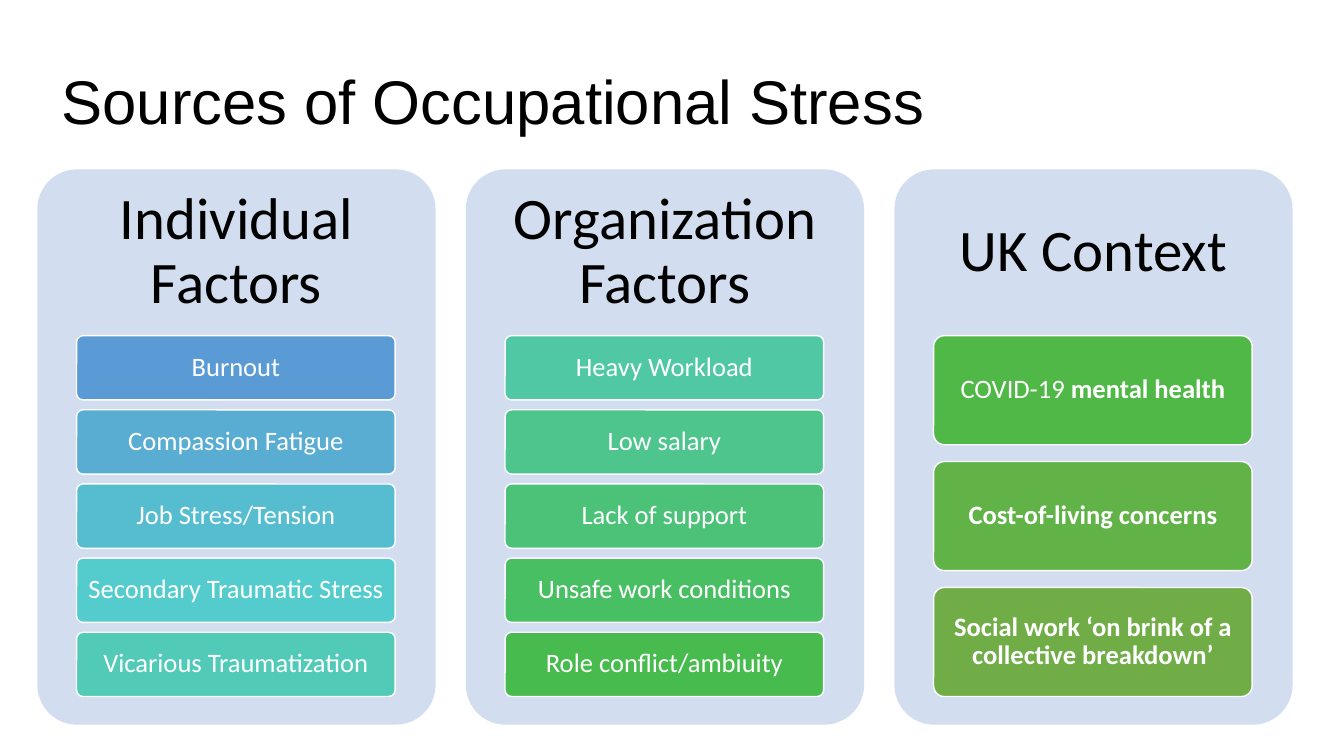
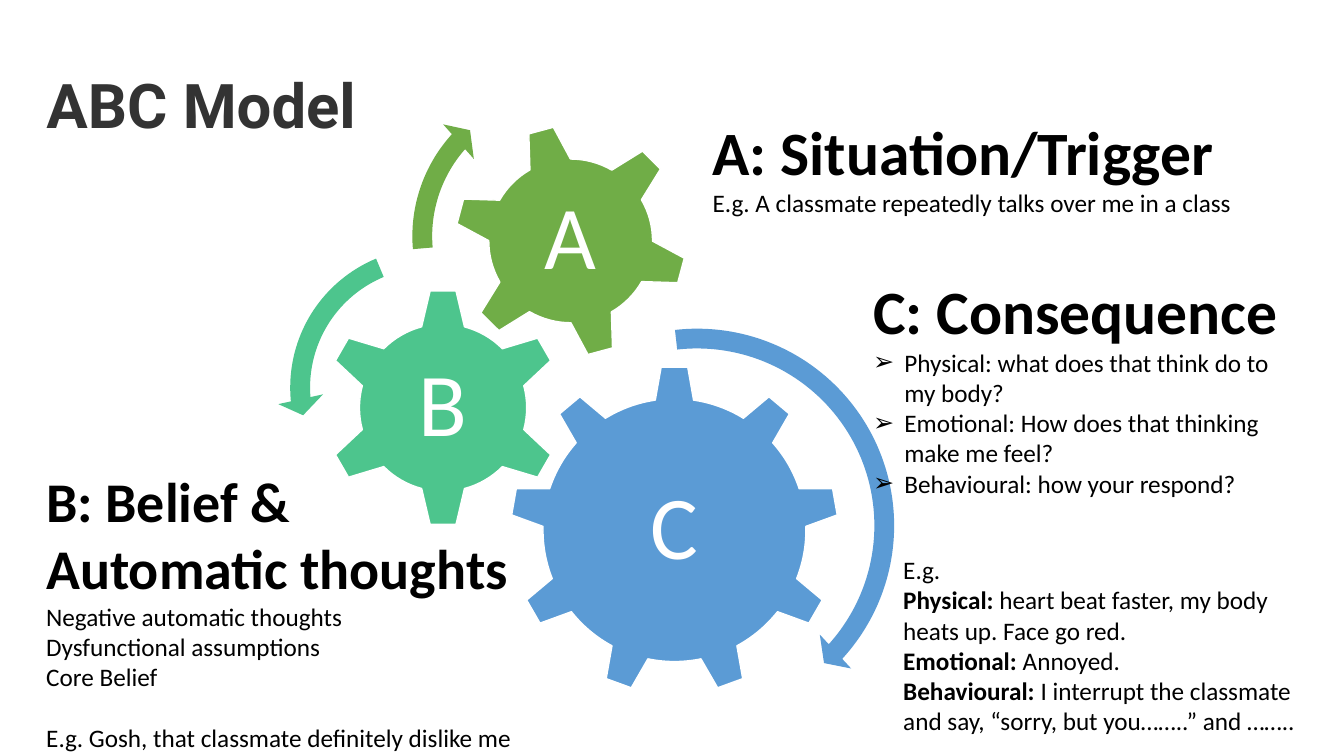
"""Build two slides on occupational stress and the ABC model."""
import pptx
import pptx.util
import pptx.dml.color
import pptx.enum.shapes
import pptx.enum.text
import pptx.oxml.ns
import lxml.etree

Inches = pptx.util.Inches
Pt = pptx.util.Pt
RGBColor = pptx.dml.color.RGBColor
SHAPE = pptx.enum.shapes.MSO_SHAPE
ALIGN = pptx.enum.text.PP_ALIGN
ANCHOR = pptx.enum.text.MSO_ANCHOR
AUTO_SIZE = pptx.enum.text.MSO_AUTO_SIZE
qn = pptx.oxml.ns.qn

BLACK = RGBColor(0x00, 0x00, 0x00)
WHITE = RGBColor(0xFF, 0xFF, 0xFF)
CHARCOAL = RGBColor(0x33, 0x33, 0x33)
PANEL = RGBColor(0xD2, 0xDE, 0xEF)
BLUE = RGBColor(0x5B, 0x9B, 0xD5)
SKY = RGBColor(0x59, 0xAC, 0xD2)
CYAN = RGBColor(0x56, 0xBC, 0xD0)
AQUA = RGBColor(0x54, 0xCC, 0xCD)
TURQUOISE = RGBColor(0x52, 0xCA, 0xB8)
TEAL = RGBColor(0x4F, 0xC8, 0xA3)
MINT = RGBColor(0x4D, 0xC5, 0x8D)
JADE = RGBColor(0x4B, 0xC2, 0x78)
EMERALD = RGBColor(0x49, 0xBF, 0x64)
GREEN = RGBColor(0x48, 0xBB, 0x4F)
LEAF = RGBColor(0x50, 0xB8, 0x46)
GRASS = RGBColor(0x61, 0xB2, 0x47)
OLIVE = RGBColor(0x70, 0xAD, 0x47)


def write(frame, text, size=18, color=BLACK, font="Calibri", align=ALIGN.LEFT,
          spacing=1.0, before=0, bullet=None):
    """Add a paragraph; asterisks enclose bold text and newlines break the line."""
    frame.word_wrap = True
    paragraph = frame.add_paragraph() if frame.text else frame.paragraphs[0]
    paragraph.alignment = align
    paragraph.line_spacing = spacing
    paragraph.space_before = Pt(before)
    for index, segment in enumerate(text.split("*")):
        for row, line in enumerate(segment.split("\n")):
            if row:
                paragraph.add_line_break()
            if line:
                run = paragraph.add_run()
                run.text = line
                run.font.name = font
                run.font.size = Pt(size)
                run.font.bold = index % 2 == 1
                run.font.color.rgb = color
    indent = Inches(0.31) if bullet else 0
    properties = paragraph._p.get_or_add_pPr()
    properties.set("marL", str(indent))
    properties.set("indent", str(-indent))
    if bullet:
        lxml.etree.SubElement(properties, qn("a:buFont")).set("typeface", "Arial")
        lxml.etree.SubElement(properties, qn("a:buChar")).set("char", bullet)
    else:
        lxml.etree.SubElement(properties, qn("a:buNone"))


def add_figure(slide, kind, box, fill, outlined=True, adjustments=()):
    """Add a flat filled shape with an optional white outline."""
    figure = slide.shapes.add_shape(kind, *map(Inches, box))
    figure.shadow.inherit = False
    figure.fill.solid()
    figure.fill.fore_color.rgb = fill
    if outlined:
        figure.line.color.rgb = WHITE
        figure.line.width = Pt(1)
    else:
        figure.line.fill.background()
    for index, value in enumerate(adjustments):
        figure.adjustments[index] = value
    return figure


presentation = pptx.Presentation()
presentation.slide_width = Inches(13.33)
presentation.slide_height = Inches(7.5)

headings = [
    ("Sources of Occupational Stress", 5, 0.51, 0.31, "Arial", BLACK),
    ("*ABC Model*", 1, 0.36, 0.35, "Roboto", CHARCOAL),
]
slides = []
for heading, layout, left, top, font, color in headings:
    slide = presentation.slides.add_slide(presentation.slide_layouts[layout])
    title = slide.shapes.title
    title.left, title.top = Inches(left), Inches(top)
    title.width, title.height = Inches(11.5), Inches(1.45)
    title.text_frame.vertical_anchor = ANCHOR.MIDDLE
    title.text_frame.auto_size = AUTO_SIZE.NONE
    write(title.text_frame, heading, size=44, color=color, font=font, spacing=0.9)
    slides.append(slide)
sources, model = slides

factor_groups = [
    ("Individual Factors", [
        ("Burnout", BLUE),
        ("Compassion Fatigue", SKY),
        ("Job Stress/Tension", CYAN),
        ("Secondary Traumatic Stress", AQUA),
        ("Vicarious Traumatization", TURQUOISE),
    ]),
    ("Organization Factors", [
        ("Heavy Workload", TEAL),
        ("Low salary", MINT),
        ("Lack of support", JADE),
        ("Unsafe work conditions", EMERALD),
        ("Role conflict/ambiuity", GREEN),
    ]),
    ("UK Context", [
        ("COVID-19* mental health*", LEAF),
        ("*Cost-of-living concerns*", GRASS),
        ("*Social work ‘on brink of a collective breakdown’*", OLIVE),
    ]),
]
GAP_RATIO = 0.154
for column, (group, factors) in enumerate(factor_groups):
    left = 0.37 + column * 4.25
    panel = add_figure(sources, SHAPE.ROUNDED_RECTANGLE, (left, 1.68, 3.95, 5.51),
                       PANEL, outlined=False, adjustments=[0.1])
    frame = panel.text_frame
    frame.vertical_anchor = ANCHOR.MIDDLE
    frame.margin_left = frame.margin_right = frame.margin_top = Inches(0.05)
    frame.margin_bottom = Inches(3.91)
    write(frame, group, size=42, align=ALIGN.CENTER, spacing=0.9)

    height = 3.58 / (len(factors) + (len(factors) - 1) * GAP_RATIO)
    for row, (factor, color) in enumerate(factors):
        top = 3.33 + row * height * (1 + GAP_RATIO)
        card = add_figure(sources, SHAPE.ROUNDED_RECTANGLE, (left + 0.39, top, 3.16, height),
                          color, adjustments=[0.1])
        frame = card.text_frame
        frame.vertical_anchor = ANCHOR.MIDDLE
        frame.margin_left = frame.margin_right = Inches(0.05)
        frame.margin_top = frame.margin_bottom = Inches(0.04)
        write(frame, factor, size=19, color=WHITE, align=ALIGN.CENTER, spacing=0.9)

gears = [
    ("C", SHAPE.GEAR_9, 5.06, 3.63, 3.26, 0, BLUE),
    ("B", SHAPE.GEAR_6, 3.21, 2.86, 2.37, 0, MINT),
    ("A", SHAPE.GEAR_6, 4.5, 1.23, 2.32, 345, OLIVE),
]
LABEL = 1.3
for letter, kind, left, top, size, rotation, color in gears:
    gear = add_figure(model, kind, (left, top, size, size), color)
    gear.rotation = rotation
    inset = (size - LABEL) / 2
    label = model.shapes.add_textbox(Inches(left + inset), Inches(top + inset),
                                     Inches(LABEL), Inches(LABEL))
    label.text_frame.vertical_anchor = ANCHOR.MIDDLE
    write(label.text_frame, letter, size=64, color=WHITE, align=ALIGN.CENTER, spacing=0.9)

turns = [
    (SHAPE.CIRCULAR_ARROW, 4.83, 3.13, 4.17, BLUE, [0.047, 2.99, 25.393, 158.123, 0.055]),
    (SHAPE.LEFT_CIRCULAR_ARROW, 2.75, 2.33, 3.03, MINT, [0.065, 4.3, 104.891, 148.378, 0.075]),
    (SHAPE.CIRCULAR_ARROW, 3.96, 0.71, 3.27, OLIVE, [0.06, 3.941, 133.138, 105.082, 0.07]),
]
for kind, left, top, size, color, adjustments in turns:
    add_figure(model, kind, (left, top, size, size), color, False, adjustments)

consequence = model.placeholders[1]
consequence.left, consequence.top = Inches(8.56), Inches(2.66)
consequence.width, consequence.height = Inches(4.42), Inches(2.36)
consequence.text_frame.auto_size = AUTO_SIZE.NONE
write(consequence.text_frame, "*C: Consequence*", size=44)
for question in [
    "Physical: what does that think do to my body?",
    "Emotional: How does that thinking make me feel?",
    "Behavioural: how your respond?",
]:
    write(consequence.text_frame, question, bullet="➢")
model.shapes._spTree.append(consequence._element)

notes = [
    ((6.97, 1.08, 5.44, 1.14), [
        ("*A: Situation/Trigger*", {"size": 44}),
        ("E.g. A classmate repeatedly talks over me in a class", {}),
    ]),
    ((0.36, 4.58, 5.31, 2.96), [
        ("*B: Belief &\nAutomatic thoughts*", {"size": 40}),
        ("Negative automatic thoughts", {}),
        ("Dysfunctional assumptions", {}),
        ("Core Belief", {}),
        ("E.g. Gosh, that classmate definitely dislike me", {"before": 22}),
    ]),
    ((8.86, 5.45, 4.42, 1.92), [
        ("E.g.", {}),
        ("*Physical: *heart beat faster, my body heats up. Face go red.", {}),
        ("*Emotional: *Annoyed.", {}),
        ("*Behavioural: *I interrupt the classmate and say, “sorry, but you……..” and ……..", {}),
    ]),
]
for box, lines in notes:
    note = model.shapes.add_textbox(*map(Inches, box))
    for text, style in lines:
        write(note.text_frame, text, **style)

presentation.save("out.pptx")
